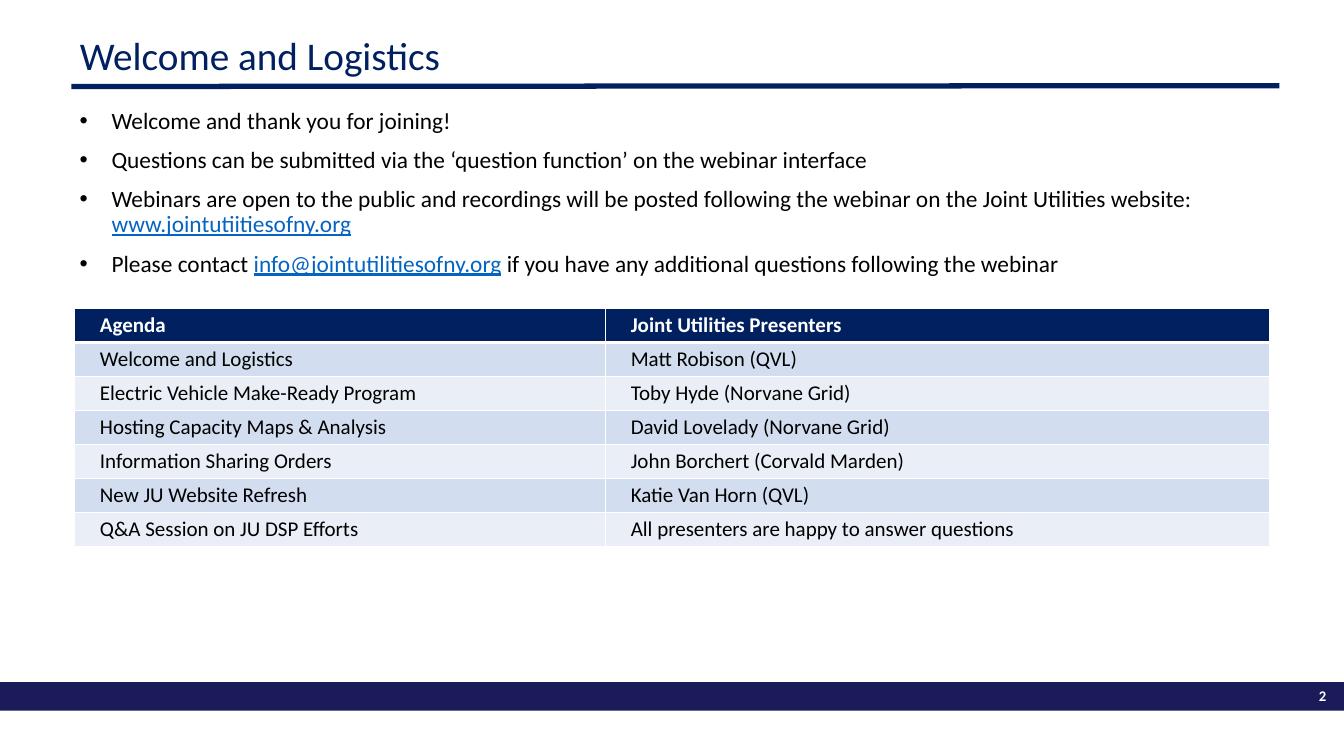
from dataclasses import dataclass
from typing import NamedTuple

from pptx import Presentation
from pptx.dml.color import RGBColor
from pptx.enum.shapes import MSO_CONNECTOR, MSO_SHAPE
from pptx.enum.text import MSO_ANCHOR, MSO_AUTO_SIZE, PP_ALIGN
from pptx.oxml.ns import qn
from pptx.slide import Slide
from pptx.table import _Cell as Cell
from pptx.text.text import Font, TextFrame
from pptx.util import Inches, Length, Pt
from lxml.etree import SubElement

WIDTH, HEIGHT = Inches(16), Inches(9)


@dataclass(frozen=True)
class Theme:
    face: str = "Calibri"
    navy: str = "002060"
    footer: str = "1B1B59"
    link: str = "0563C1"
    white: str = "FFFFFF"
    black: str = "000000"
    bands: tuple[str, str] = ("D2DEEF", "EAEFF7")
    title_size: float = 33.6
    bullet_size: float = 20
    table_size: float = 18
    number_size: float = 12.6
    rule_width: float = 4.5
    border: float = 1
    header_border: float = 3


THEME = Theme()


def across(percent: float) -> Length:
    return Length(round(WIDTH * percent / 100))


def down(percent: float) -> Length:
    return Length(round(HEIGHT * percent / 100))


class Area(NamedTuple):
    left: float
    top: float
    width: float
    height: float

    def place(self) -> tuple[Length, Length, Length, Length]:
        return across(self.left), down(self.top), across(self.width), down(self.height)


class Part(NamedTuple):
    text: str
    is_link: bool = False


class Session(NamedTuple):
    topic: str
    presenter: str


TITLE = Area(5.31, 4.44, 89.88, 6.33)
BULLETS = Area(5.31, 13.89, 89.94, 29.33)
AGENDA = Area(5.56, 40.78, 88.88, 31.5)
FOOTER = Area(0, 90.22, 100, 3.78)
PAGE_NUMBER = Area(95.19, 90.33, 4.12, 3.44)
RULE_START, RULE_END = (5.31, 11.44), (95.19, 11.33)
TOPIC_WIDTH = 39.5

MESSAGES = [
    [Part("Welcome and thank you for joining!")],
    [Part("Questions can be submitted via the ‘question function’ on the webinar interface")],
    [
        Part("Webinars are open to the public and recordings will be posted following "
             "the webinar on the Joint Utilities website: "),
        Part("www.jointutiitiesofny.org", True),
    ],
    [
        Part("Please contact "),
        Part("info@jointutilitiesofny.org", True),
        Part(" if you have any additional questions following the webinar"),
    ],
]

SESSIONS = [
    Session("Agenda", "Joint Utilities Presenters"),
    Session("Welcome and Logistics", "Matt Robison (QVL)"),
    Session("Electric Vehicle Make-Ready Program", "Toby Hyde (Norvane Grid)"),
    Session("Hosting Capacity Maps & Analysis", "David Lovelady (Norvane Grid)"),
    Session("Information Sharing Orders", "John Borchert (Corvald Marden)"),
    Session("New JU Website Refresh", "Katie Van Horn (QVL)"),
    Session("Q&A Session on JU DSP Efforts", "All presenters are happy to answer questions"),
]


def style(font: Font, size: float, color: str, bold: bool = False) -> None:
    font.name = THEME.face
    font.size = Pt(size)
    font.bold = bold
    font.color.rgb = RGBColor.from_string(color)


def add_text_area(slide: Slide, area: Area) -> TextFrame:
    frame = slide.shapes.add_textbox(*area.place()).text_frame
    frame.word_wrap = True
    return frame


def add_title(slide: Slide) -> None:
    title = slide.shapes.title
    title.left, title.top, title.width, title.height = TITLE.place()
    frame = title.text_frame
    frame.text = "Welcome and Logistics"
    frame.auto_size = MSO_AUTO_SIZE.NONE
    frame.vertical_anchor = MSO_ANCHOR.MIDDLE
    heading = frame.paragraphs[0]
    heading.alignment = PP_ALIGN.LEFT
    heading.line_spacing = 0.9
    style(heading.font, THEME.title_size, THEME.navy)


def add_rule(slide: Slide) -> None:
    (x1, y1), (x2, y2) = RULE_START, RULE_END
    rule = slide.shapes.add_connector(
        MSO_CONNECTOR.STRAIGHT, across(x1), down(y1), across(x2), down(y2))
    rule.line.color.rgb = RGBColor.from_string(THEME.navy)
    rule.line.width = Pt(THEME.rule_width)
    SubElement(rule._element.spPr, qn("a:effectLst"))


def add_footer(slide: Slide) -> None:
    band = slide.shapes.add_shape(MSO_SHAPE.RECTANGLE, *FOOTER.place())
    band.shadow.inherit = False
    band.fill.solid()
    band.fill.fore_color.rgb = RGBColor.from_string(THEME.footer)
    band.line.fill.background()
    number = add_text_area(slide, PAGE_NUMBER).paragraphs[0]
    number.text = "2"
    number.alignment = PP_ALIGN.RIGHT
    style(number.font, THEME.number_size, THEME.white, bold=True)


def add_bullets(slide: Slide) -> None:
    frame = add_text_area(slide, BULLETS)
    for index, message in enumerate(MESSAGES):
        bullet = frame.add_paragraph() if index else frame.paragraphs[0]
        bullet.line_spacing = 0.9
        bullet.space_before = Pt(6 if index else 0)
        bullet.space_after = Pt(6)
        properties = bullet._p.get_or_add_pPr()
        properties.set("marL", str(Inches(0.38)))
        properties.set("indent", str(-Inches(0.38)))
        SubElement(properties, qn("a:buFont"), typeface="Arial")
        SubElement(properties, qn("a:buChar"), char="•")
        style(bullet.font, THEME.bullet_size, THEME.black)
        for part in message:
            run = bullet.add_run()
            run.text = part.text
            if part.is_link:
                run.font.underline = True
                run.font.color.rgb = RGBColor.from_string(THEME.link)


def add_borders(cell: Cell, top: float, bottom: float) -> None:
    properties = cell._tc.get_or_add_tcPr()
    widths = {"lnL": THEME.border, "lnR": THEME.border, "lnT": top, "lnB": bottom}
    for side, width in widths.items():
        line = SubElement(properties, qn(f"a:{side}"), w=str(Pt(width)))
        fill = SubElement(line, qn("a:solidFill"))
        SubElement(fill, qn("a:srgbClr"), val=THEME.white)


def add_agenda(slide: Slide) -> None:
    agenda = slide.shapes.add_table(len(SESSIONS), 2, *AGENDA.place()).table
    agenda.horz_banding = False
    agenda.columns[0].width = across(TOPIC_WIDTH)
    agenda.columns[1].width = across(AGENDA.width - TOPIC_WIDTH)
    for row, session in enumerate(SESSIONS):
        is_header = row == 0
        background = THEME.navy if is_header else THEME.bands[(row - 1) % 2]
        top = THEME.header_border if row == 1 else THEME.border
        bottom = THEME.header_border if is_header else THEME.border
        for column, text in enumerate(session):
            cell = agenda.cell(row, column)
            add_borders(cell, top, bottom)
            cell.fill.solid()
            cell.fill.fore_color.rgb = RGBColor.from_string(background)
            cell.text = text
            entry = cell.text_frame.paragraphs[0]
            entry._p.get_or_add_pPr().set("marL", str(Inches(0.2)))
            style(entry.font, THEME.table_size,
                  THEME.white if is_header else THEME.black, bold=is_header)


def main() -> None:
    deck = Presentation()
    deck.slide_width, deck.slide_height = WIDTH, HEIGHT
    slide = deck.slides.add_slide(deck.slide_layouts[5])
    add_footer(slide)
    add_rule(slide)
    add_bullets(slide)
    add_title(slide)
    add_agenda(slide)
    deck.save("out.pptx")


if __name__ == "__main__":
    main()
